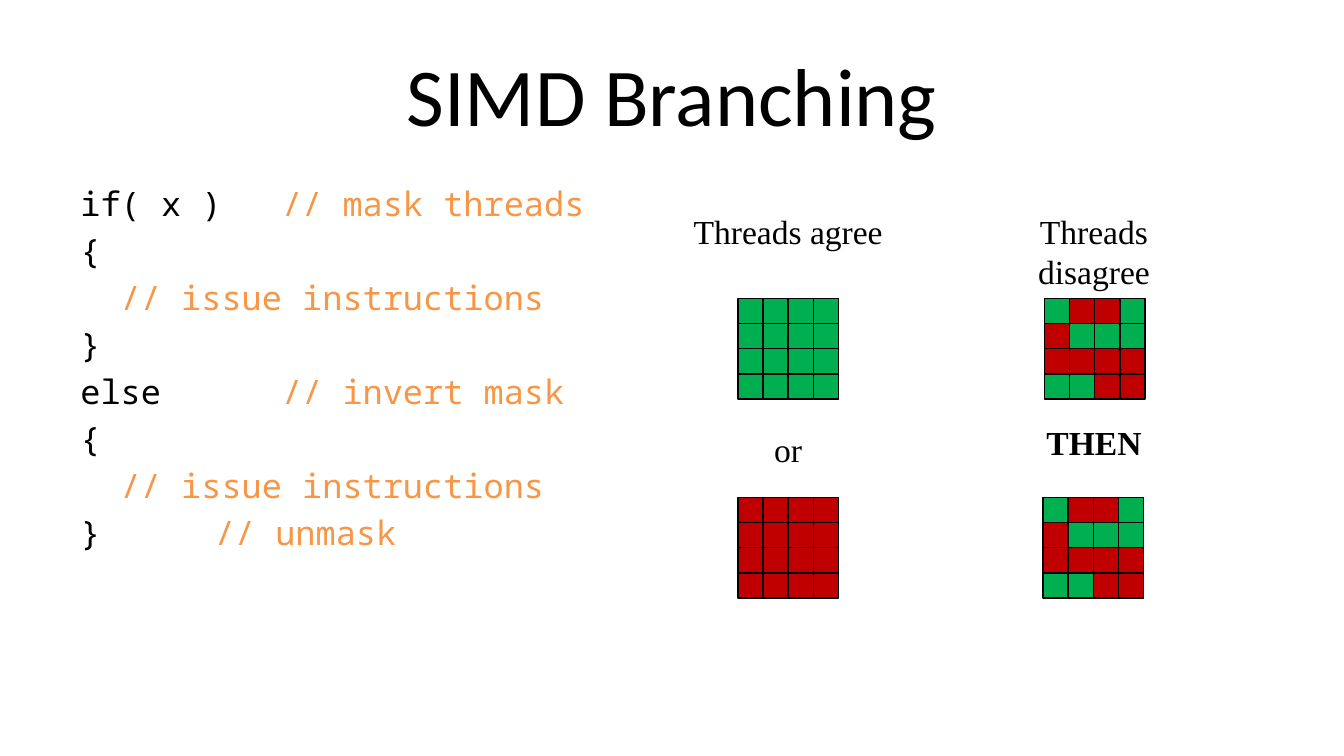
"""Build the SIMD Branching slide with its code listing and thread masks."""
from lxml import etree
from pptx import Presentation
from pptx.dml.color import RGBColor
from pptx.enum.shapes import MSO_SHAPE
from pptx.enum.text import MSO_ANCHOR, PP_ALIGN
from pptx.oxml.ns import qn
from pptx.util import Inches, Pt

RECT = MSO_SHAPE.RECTANGLE
MIDDLE, TOP = MSO_ANCHOR.MIDDLE, MSO_ANCHOR.TOP
LEFT, CENTER = PP_ALIGN.LEFT, PP_ALIGN.CENTER
BLACK = RGBColor(0x00, 0x00, 0x00)
ORANGE = RGBColor(0xF7, 0x96, 0x46)
GREEN = RGBColor(0x00, 0xB0, 0x50)
RED = RGBColor(0xC0, 0x00, 0x00)

TITLE_FONT = {"name": "Calibri", "size": Pt(44), "bold": False}
CODE_FONT = {"name": "Noto Sans Mono", "size": Pt(18)}
LABEL_FONT = {"name": "Times New Roman", "size": Pt(18)}
TAB_STOPS = (0.5, 1, 1.5)
GRID_SIZE = 0.75
MASK_COLORS = {"G": GREEN, "R": RED}

CODE = [
    ("if( x ) \t", "// mask threads"),
    ("{", ""),
    ("", "  // issue instructions"),
    ("}", ""),
    ("else \t\t", "// invert mask"),
    ("{", ""),
    ("", "  // issue instructions"),
    ("}\t\t", "// unmask"),
]
ALL_ON, ALL_OFF = ["GGGG"] * 4, ["RRRR"] * 4
MIXED = ["GRRG", "RGGG", "RRRR", "GGRR"]
LABELS = [
    ("Threads agree", (5.06, 1.52, 1.61, 0.4), False, {}),
    ("or", (5.66, 3.14, 0.41, 0.4), False, {}),
    ("Threads disagree", (7.2, 1.52, 1.88, 0.71), True, {}),
    ("THEN", (7.43, 3.09, 1.42, 0.4), False, {"bold": True}),
]
MASKS = [
    (5.49, 2.22, ALL_ON, True),
    (5.49, 3.7, ALL_OFF, True),
    (7.77, 2.22, MIXED, False),
    (7.76, 3.7, MIXED, False),
]


class SlideBuilder:
    def __init__(self, prs):
        self.s = prs.slides.add_slide(prs.slide_layouts[5])

    def set_attrs(self, obj, values):
        for name, value in values.items():
            setattr(obj, name, value)

    def run(self, p, text, font, color=BLACK):
        r = p.add_run()
        r.text = text
        self.set_attrs(r.font, font)
        r.font.color.rgb = color

    def title(self, text, box):
        sp = self.s.shapes.title
        places = map(Inches, box)
        self.set_attrs(sp, dict(zip(("left", "top", "width", "height"), places)))
        tf = sp.text_frame
        tf.vertical_anchor = MIDDLE
        p = tf.paragraphs[0]
        p.alignment = CENTER
        self.run(p, text, TITLE_FONT)

    def text_box(self, box, wrap=True):
        tf = self.s.shapes.add_textbox(*map(Inches, box)).text_frame
        self.set_attrs(tf, {"word_wrap": wrap, "vertical_anchor": TOP})
        return tf

    def label(self, text, box, wrap, extra):
        tf = self.text_box(box, wrap)
        if wrap:
            inset = Inches(0.2)
            self.set_attrs(tf, {"margin_left": inset, "margin_right": inset})
        p = tf.paragraphs[0]
        p.alignment = CENTER
        self.run(p, text, {**LABEL_FONT, **extra})

    def code(self, lines, box):
        tf = self.text_box(box)
        for i, (statement, comment) in enumerate(lines):
            p = tf.add_paragraph() if i else tf.paragraphs[0]
            self.set_attrs(p, {"alignment": LEFT, "space_after": Pt(3.6)})
            tabs = etree.SubElement(p._p.get_or_add_pPr(), qn("a:tabLst"))
            for stop in TAB_STOPS:
                etree.SubElement(tabs, qn("a:tab"), pos=str(Inches(stop)), algn="l")
            for text, color in ((statement, BLACK), (comment, ORANGE)):
                if text:
                    self.run(p, text, CODE_FONT, color)

    def mask(self, left, top, rows, grouped):
        shapes = self.s.shapes
        if grouped:
            shapes = shapes.add_group_shape().shapes
        cell = GRID_SIZE / len(rows)
        for i, row in enumerate(rows):
            for j, state in enumerate(row):
                box = (left + j * cell, top + i * cell, cell, cell)
                sp = shapes.add_shape(RECT, *map(Inches, box))
                sp.shadow.inherit = False
                sp.fill.solid()
                sp.fill.fore_color.rgb = MASK_COLORS[state]
                sp.line.color.rgb = BLACK
                sp.line.width = Pt(0.75)


def main():
    prs = Presentation()
    prs.slide_width = Inches(10)
    prs.slide_height = prs.slide_width * 9 // 16
    slide = SlideBuilder(prs)
    slide.title("SIMD Branching", (0.5, 0.23, 9, 0.94))
    slide.code(CODE, (0.5, 1.31, 4.42, 3.71))
    for label in LABELS:
        slide.label(*label)
    for mask in MASKS:
        slide.mask(*mask)
    prs.save("out.pptx")


if __name__ == "__main__":
    main()
